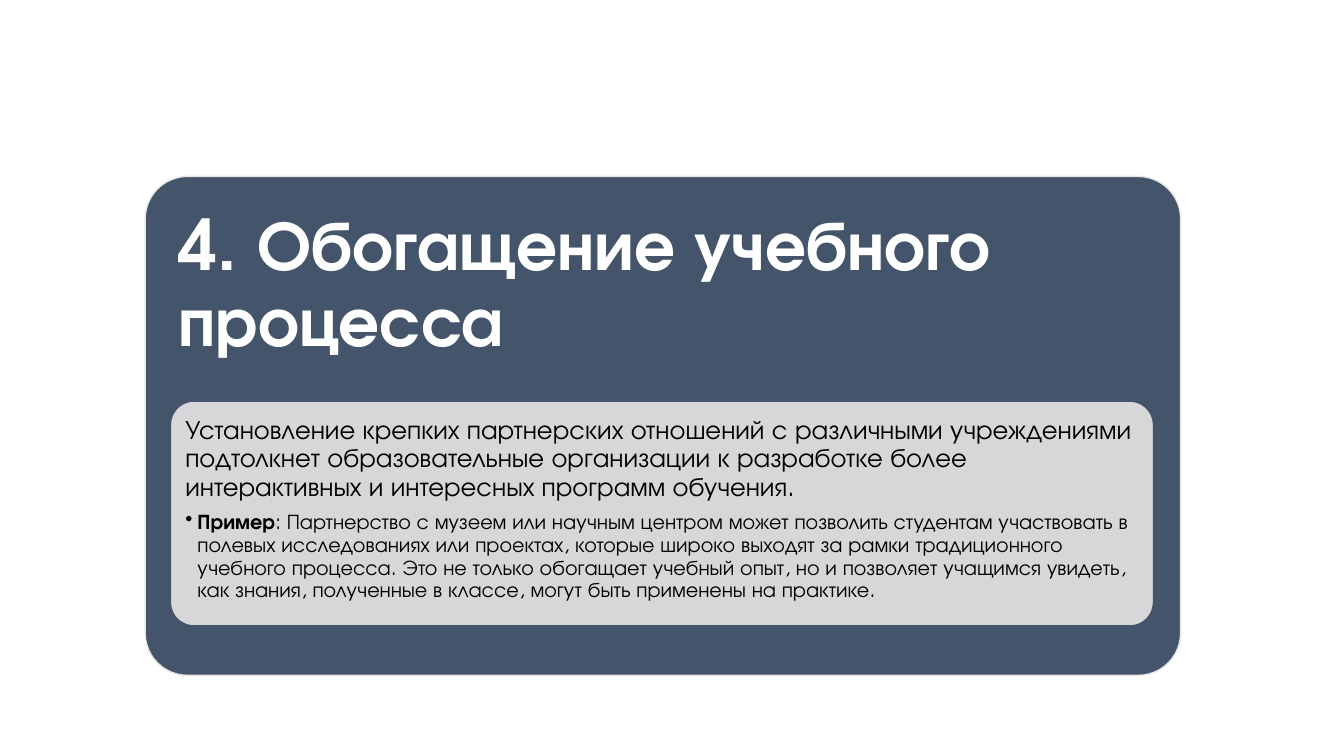
from lxml import etree
from pptx import Presentation
from pptx.dml.color import RGBColor
from pptx.enum.shapes import MSO_SHAPE
from pptx.enum.text import MSO_ANCHOR, PP_ALIGN
from pptx.oxml.ns import qn
from pptx.util import Pt

PX = 9144
ROUND = MSO_SHAPE.ROUNDED_RECTANGLE
TOP = MSO_ANCHOR.TOP
LEFT = PP_ALIGN.LEFT
FONT = "TeX Gyre Adventor"


def tint(color, code):
    color.rgb = RGBColor.from_string(code)


def style(para, size, code, after):
    para.alignment = LEFT
    para.line_spacing = 0.9
    para.space_after = Pt(after)
    for run in para.runs:
        run.font.name = FONT
        run.font.size = Pt(size)
        tint(run.font.color, code)


deck = Presentation()
deck.slide_width = 1333 * PX
deck.slide_height = 750 * PX
slide = deck.slides.add_slide(deck.slide_layouts[6])

cards = []
for box, adj, fill, line, pad, low in (
    ((144, 175, 1027, 495), 0.085, "44546A", "E7E6E6", 21, 306),
    ((169, 398, 975, 223), 0.105, "E7E6E6", "44546A", 8, 8),
):
    card = slide.shapes.add_shape(ROUND, *(n * PX for n in box))
    card.adjustments[0] = adj
    card.shadow.inherit = False
    card.fill.solid()
    tint(card.fill.fore_color, fill)
    tint(card.line.color, line)
    card.line.width = Pt(1)
    frame = card.text_frame
    frame.word_wrap = True
    frame.vertical_anchor = TOP
    frame.margin_left = frame.margin_top = frame.margin_right = pad * PX
    frame.margin_bottom = low * PX
    cards.append(card)

outer, inner = cards
color = inner.fill._xPr.find(qn("a:solidFill"))[0]
etree.SubElement(color, qn("a:alpha"), val="90000")

title = outer.text_frame.paragraphs[0]
title.text = "4. Обогащение учебного процесса"
style(title, 50, "FFFFFF", 17.5)
title.runs[0].font.bold = True

lead = inner.text_frame.paragraphs[0]
lead.text = (
    "Установление крепких партнерских отношений с различными учреждениями "
    "подтолкнет образовательные организации к разработке более "
    "интерактивных и интересных программ обучения."
)
style(lead, 19, "000000", 6.65)

case = inner.text_frame.add_paragraph()
case.level = 1
props = case._p.get_or_add_pPr()
props.set("marL", str(12 * PX))
props.set("indent", str(-12 * PX))
etree.SubElement(props, qn("a:buChar"), char="•")
for text, bold in (
    ("Пример", True),
    (
        ": Партнерство с музеем или научным центром может позволить студентам "
        "участвовать в полевых исследованиях или проектах, которые широко "
        "выходят за рамки традиционного учебного процесса. Это не только "
        "обогащает учебный опыт, но и позволяет учащимся увидеть, как знания, "
        "полученные в классе, могут быть применены на практике.",
        False,
    ),
):
    run = case.add_run()
    run.text = text
    run.font.bold = bold
style(case, 15, "000000", 2.25)

deck.save("out.pptx")
